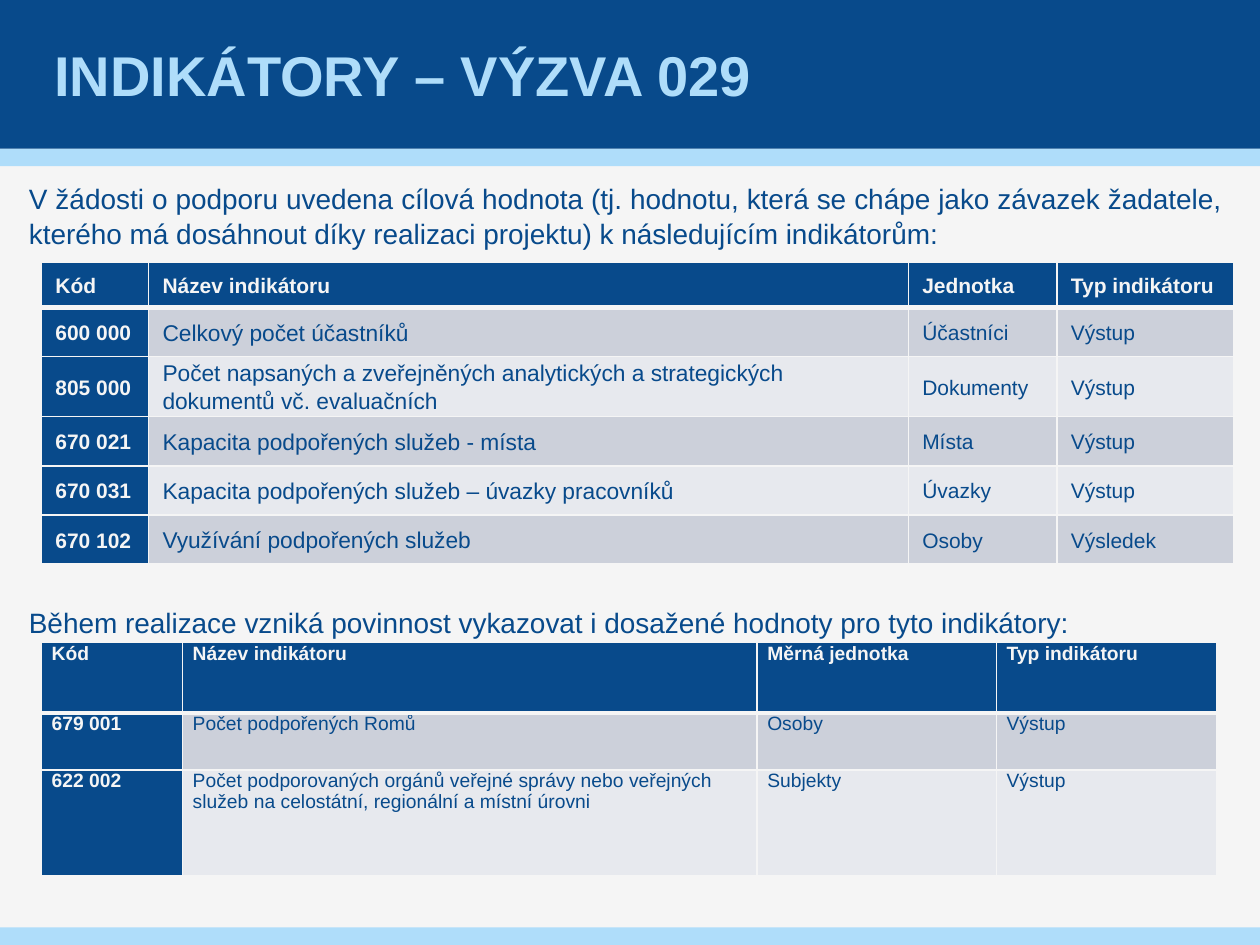
from lxml import etree
from pptx import Presentation
from pptx.dml.color import RGBColor
from pptx.enum.shapes import MSO_SHAPE
from pptx.enum.text import MSO_ANCHOR as Anchor, PP_ALIGN as Align
from pptx.oxml.ns import qn
from pptx.util import Inches, Pt

NAVY, SKY, PAPER = "084A8B", "AFDDFA", "F5F5F5"
STRIPES = ["CCD0DA", "E7E9EE"]


def paint(target, color):
    """Give a fill a solid colour."""
    target.solid()
    target.fore_color.rgb = RGBColor.from_string(color)


def set_values(target, values):
    for name, value in values.items():
        setattr(target, name, value)


def draw_borders(cell, top, bottom):
    properties = cell._tc.get_or_add_tcPr()
    widths = {"lnL": 1, "lnR": 1, "lnT": top, "lnB": bottom}
    for index, (side, width) in enumerate(widths.items()):
        line = etree.Element(qn(f"a:{side}"), w=str(Pt(width)))
        fill = etree.SubElement(line, qn("a:solidFill"))
        etree.SubElement(fill, qn("a:srgbClr"), val=PAPER)
        properties.insert(index, line)


class SlideBuilder:
    font = "Arial"

    def __init__(self, slide):
        self.slide = slide
        paint(slide.background.fill, PAPER)

    def band(self, top, height, color):
        shape = self.slide.shapes.add_shape(
            MSO_SHAPE.RECTANGLE, 0, Inches(top), Inches(10), Inches(height))
        shape.shadow.inherit = False
        paint(shape.fill, color)
        shape.line.fill.background()

    def fill_paragraph(self, frame, text, size, color, bold=False, **spacing):
        paragraph = frame.paragraphs[0]
        set_values(paragraph, spacing)
        run = paragraph.add_run()
        run.text = text
        set_values(run.font, {"name": self.font, "size": Pt(size), "bold": bold})
        paint(run.font.fill, color)
        return paragraph

    def text(self, box, text, size, color, anchor=Anchor.TOP, inset=0, **style):
        frame = self.slide.shapes.add_textbox(*map(Inches, box)).text_frame
        set_values(frame, {
            "word_wrap": True, "vertical_anchor": anchor,
            "margin_left": Inches(inset), "margin_right": Inches(inset),
            "margin_top": 0, "margin_bottom": 0})
        self.fill_paragraph(frame, text, size, color, **style)

    def table(self, left, top, columns, heights, rows, sizes, inset, anchor, **spacing):
        """Add a table with a navy header row and first column; sizes go by column."""
        table = self.slide.shapes.add_table(
            len(rows), len(columns), Inches(left), Inches(top),
            Inches(sum(columns)), Inches(sum(heights))).table
        table.first_col = True
        for column, width in zip(table.columns, columns):
            column.width = Inches(width)
        for r, (row, height, values) in enumerate(zip(table.rows, heights, rows)):
            row.height = Inches(height)
            for c, (cell, value) in enumerate(zip(row.cells, values)):
                heading = r == 0 or c == 0
                set_values(cell, {
                    "margin_left": Inches(inset), "margin_right": Inches(inset),
                    "margin_top": 0, "margin_bottom": 0, "vertical_anchor": anchor})
                paint(cell.fill, NAVY if heading else STRIPES[(r - 1) % 2])
                draw_borders(cell, 3 if r == 1 else 1, 3 if r == 0 else 1)
                paragraph = self.fill_paragraph(
                    cell.text_frame, value, sizes[0] if heading else sizes[c],
                    PAPER if heading else NAVY, heading, **spacing)
                paragraph._p.get_or_add_pPr().set("marL", str(Inches(0.04)))


def main():
    presentation = Presentation()
    presentation.slide_width, presentation.slide_height = Inches(10), Inches(7.5)
    builder = SlideBuilder(presentation.slides.add_slide(presentation.slide_layouts[6]))

    builder.band(1.18, 0.14, SKY)
    builder.band(0, 1.18, NAVY)
    builder.band(7.36, 0.14, SKY)
    builder.text((0.39, 0, 9.21, 1.18), "INDIKÁTORY – VÝZVA 029", 32, SKY,
                 anchor=Anchor.MIDDLE, inset=0.04, bold=True)

    body = {"alignment": Align.JUSTIFY, "line_spacing": 1.05}
    builder.text(
        (0.23, 1.43, 9.47, 0.6),
        "V žádosti o podporu uvedena cílová hodnota (tj. hodnotu, která se chápe "
        "jako závazek žadatele, kterého má dosáhnout díky realizaci projektu) "
        "k následujícím indikátorům:", 16, NAVY, **body)
    builder.table(
        0.33, 2.08, [0.85, 6.03, 1.18, 1.4], [0.36] + [0.39] * 5,
        [("Kód", "Název indikátoru", "Jednotka", "Typ indikátoru"),
         ("600 000", "Celkový počet účastníků", "Účastníci", "Výstup"),
         ("805 000", "Počet napsaných a zveřejněných analytických a strategických "
                     "dokumentů vč. evaluačních", "Dokumenty", "Výstup"),
         ("670 021", "Kapacita podpořených služeb - místa", "Místa", "Výstup"),
         ("670 031", "Kapacita podpořených služeb – úvazky pracovníků", "Úvazky", "Výstup"),
         ("670 102", "Využívání podpořených služeb", "Osoby", "Výsledek")],
        sizes=[12, 13, 12, 12], inset=0.07, anchor=Anchor.MIDDLE,
        line_spacing=1.1, space_before=Pt(3), space_after=Pt(6))

    builder.text(
        (0.23, 4.79, 9.47, 0.3),
        "Během realizace vzniká povinnost vykazovat i dosažené hodnoty pro tyto indikátory:",
        16, NAVY, **body)
    builder.table(
        0.33, 5.1, [1.12, 4.56, 1.9, 1.75], [0.56, 0.45, 0.84],
        [("Kód", "Název indikátoru", "Měrná jednotka", "Typ indikátoru"),
         ("679 001", "Počet podpořených Romů", "Osoby", "Výstup"),
         ("622 002", "Počet podporovaných orgánů veřejné správy nebo veřejných "
                     "služeb na celostátní, regionální a místní úrovni",
          "Subjekty", "Výstup")],
        sizes=[11] * 4, inset=0.04, anchor=Anchor.TOP,
        space_before=Pt(3), space_after=Pt(3))

    presentation.save("out.pptx")


if __name__ == "__main__":
    main()
